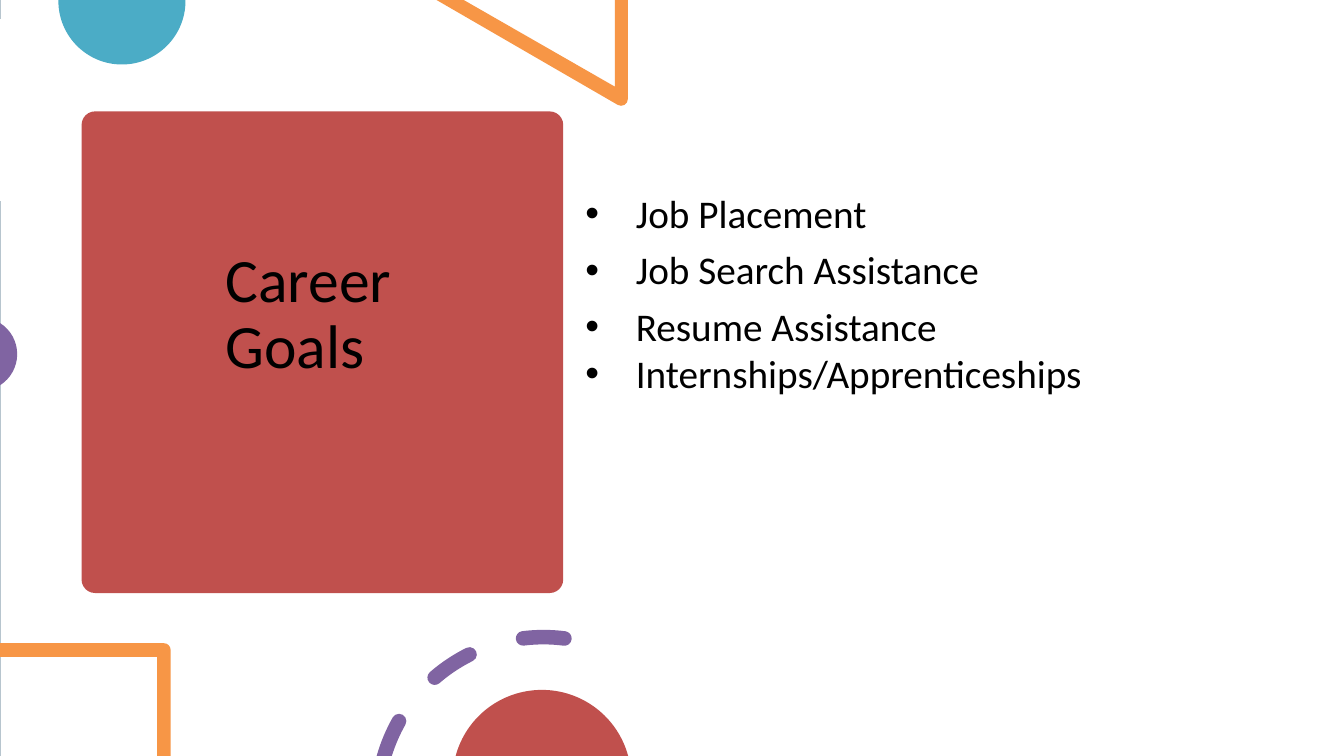
from math import ceil, cos, radians, sin, tan

from lxml.etree import SubElement
from pptx import Presentation
from pptx.dml.color import RGBColor
from pptx.enum.shapes import MSO_SHAPE
from pptx.enum.text import MSO_ANCHOR
from pptx.oxml.ns import qn
from pptx.util import Pt

TITLE = "Career Goals"
GOALS = ["Job Placement", "Job Search Assistance", "Resume Assistance", "Internships/Apprenticeships"]

FONT = "Calibri"
BLACK = RGBColor(0x00, 0x00, 0x00)
WHITE = RGBColor(0xFF, 0xFF, 0xFF)
NAVY = RGBColor(0x33, 0x5B, 0x74)
RED = RGBColor(0xC0, 0x50, 0x4D)
TEAL = RGBColor(0x4B, 0xAC, 0xC6)
ORANGE = RGBColor(0xF7, 0x96, 0x46)
PURPLE = RGBColor(0x80, 0x64, 0xA2)

WIDTH, HEIGHT = 960, 540
UNITS_PER_POINT = 100
BAND_TOP, BAND_BOTTOM = 13.7, 143.3

RING_CENTER, RING_RADIUS, DASH_HALF = (388.1, 573.6), 118.5, 5.2
ROUNDED_DASHES = [(229.1, 243.6), (263, 277.3)]


def polar(center, radius, angle):
    return center[0] + radius * cos(radians(angle)), center[1] + radius * sin(radians(angle))


def arc(center, radius, start, end):
    pieces = ceil(abs(end - start) / 90)
    sweep = (end - start) / pieces
    pull = 4 / 3 * tan(radians(sweep / 4)) * radius
    segments = [[polar(center, radius, start)]]
    for piece in range(pieces):
        first = start + piece * sweep
        last = first + sweep
        segments.append([
            polar(polar(center, radius, first), pull, first + 90),
            polar(polar(center, radius, last), pull, last - 90),
            polar(center, radius, last),
        ])
    return segments


def lines(*points):
    return [[point] for point in points]


def band(top, bottom):
    return lines((WIDTH, top), (0, top), (0, bottom), (WIDTH, bottom))


def ring_dash(start, end, inner_start=None):
    end_cap = arc(polar(RING_CENTER, RING_RADIUS, end), DASH_HALF, end, end + 180)
    segments = arc(RING_CENTER, RING_RADIUS + DASH_HALF, start, end) + end_cap[1:]
    segments += arc(RING_CENTER, RING_RADIUS - DASH_HALF, end, inner_start or start)[1:]
    if inner_start is None:
        segments += arc(polar(RING_CENTER, RING_RADIUS, start), DASH_HALF, start + 180, start + 360)[1:]
    return segments


BACKDROP = [(NAVY, [band(0, HEIGHT)]), (WHITE, [band(BAND_TOP, BAND_BOTTOM)])]
TRIANGLE = (lines((448.5, 0), (439.2, 0), (439.2, 61.9), (331.2, 0), (311.8, 0))
            + arc((443.7, 70.8), 4.8, 120, 0))
SQUARE = (lines((0, 459.4), (0, 469.2), (112.3, 469.2), (112.3, HEIGHT), (121.9, HEIGHT))
          + arc((117.1, 464.2), 4.8, 0, -90))
DECORATIONS = [
    (TEAL, [lines((132.5, 0), (41.7, 0)) + arc((87.1, 0.7), 45.4, 180, 0)]),
    (ORANGE, [TRIANGLE]),
    (PURPLE, [arc((-14, 253), 26.3, -57.8, 57.8)]),
    (ORANGE, [SQUARE]),
    (PURPLE, [ring_dash(195.8, 209.6, 197.3)] + [ring_dash(*span) for span in ROUNDED_DASHES]),
    (RED, [arc((387.1, 556.6), 63.8, 195.1, 344.9)]),
]


def paint(shape, color):
    shape.shadow.inherit = False
    shape.fill.solid()
    shape.fill.fore_color.rgb = color
    shape.line.fill.background()


def bend(shape, segments):
    drawn = list(shape._element.iter(qn("a:lnTo")))
    for segment in segments:
        steps, drawn = drawn[:len(segment)], drawn[len(segment):]
        if len(segment) == 3:
            curve = steps[0].getparent().makeelement(qn("a:cubicBezTo"))
            steps[0].addprevious(curve)
            for step in steps:
                curve.append(step[0])
                step.getparent().remove(step)


def add_outline(slide, color, contours):
    builder, segments = None, []
    for contour in contours:
        points = [(x * UNITS_PER_POINT, y * UNITS_PER_POINT) for segment in contour for x, y in segment]
        if builder is None:
            builder = slide.shapes.build_freeform(*points[0], scale=Pt(1) / UNITS_PER_POINT)
        else:
            builder.move_to(*points[0])
        builder.add_line_segments(points[1:], close=True)
        segments += contour[1:]
    shape = builder.convert_to_shape()
    bend(shape, segments)
    paint(shape, color)


def add_panel(slide, kind, left, top, width, height, color):
    panel = slide.shapes.add_shape(kind, Pt(left), Pt(top), Pt(width), Pt(height))
    paint(panel, color)
    return panel


def add_text(slide, left, top, width, height):
    frame = slide.shapes.add_textbox(Pt(left), Pt(top), Pt(width), Pt(height)).text_frame
    frame.word_wrap = True
    return frame


def style(paragraph, size, margin, indent):
    paragraph.font.name = FONT
    paragraph.font.size = Pt(size)
    paragraph.font.color.rgb = BLACK
    properties = paragraph._p.get_or_add_pPr()
    properties.set("marL", str(Pt(margin)))
    properties.set("indent", str(Pt(indent)))
    return properties


def add_bullet(properties):
    defaults = properties.find(qn("a:defRPr"))
    font = SubElement(properties, qn("a:buFont"), typeface="Arial")
    bullet = SubElement(properties, qn("a:buChar"), char="•")
    defaults.addprevious(font)
    defaults.addprevious(bullet)


def main():
    presentation = Presentation()
    presentation.slide_width, presentation.slide_height = Pt(WIDTH), Pt(HEIGHT)
    slide = presentation.slides.add_slide(presentation.slide_layouts[6])

    for color, contours in BACKDROP:
        add_outline(slide, color, contours)
    add_panel(slide, MSO_SHAPE.RECTANGLE, 0.3, 0, WIDTH - 0.3, HEIGHT, WHITE)
    card = add_panel(slide, MSO_SHAPE.ROUNDED_RECTANGLE, 58.3, 79.6, 344, 344, RED)
    card.adjustments[0] = 0.028

    title = add_text(slide, 58.3, 82, 319.7, 333.4)
    title.vertical_anchor = MSO_ANCHOR.MIDDLE
    title.margin_bottom = Pt(50.4)
    title.text = TITLE
    heading = title.paragraphs[0]
    heading.line_spacing = 0.9
    style(heading, 44, 95.8, 0)

    for color, contours in DECORATIONS:
        add_outline(slide, color, contours)

    goals = add_text(slide, 411.1, 135.4, 488.2, 191.5)
    goals.text = "\n".join(GOALS)
    for paragraph in goals.paragraphs:
        add_bullet(style(paragraph, 28, 36, -36))
    for paragraph in goals.paragraphs[:-1]:
        paragraph.line_spacing = 0.9
        paragraph.space_before = Pt(10)

    presentation.save("out.pptx")


if __name__ == "__main__":
    main()
